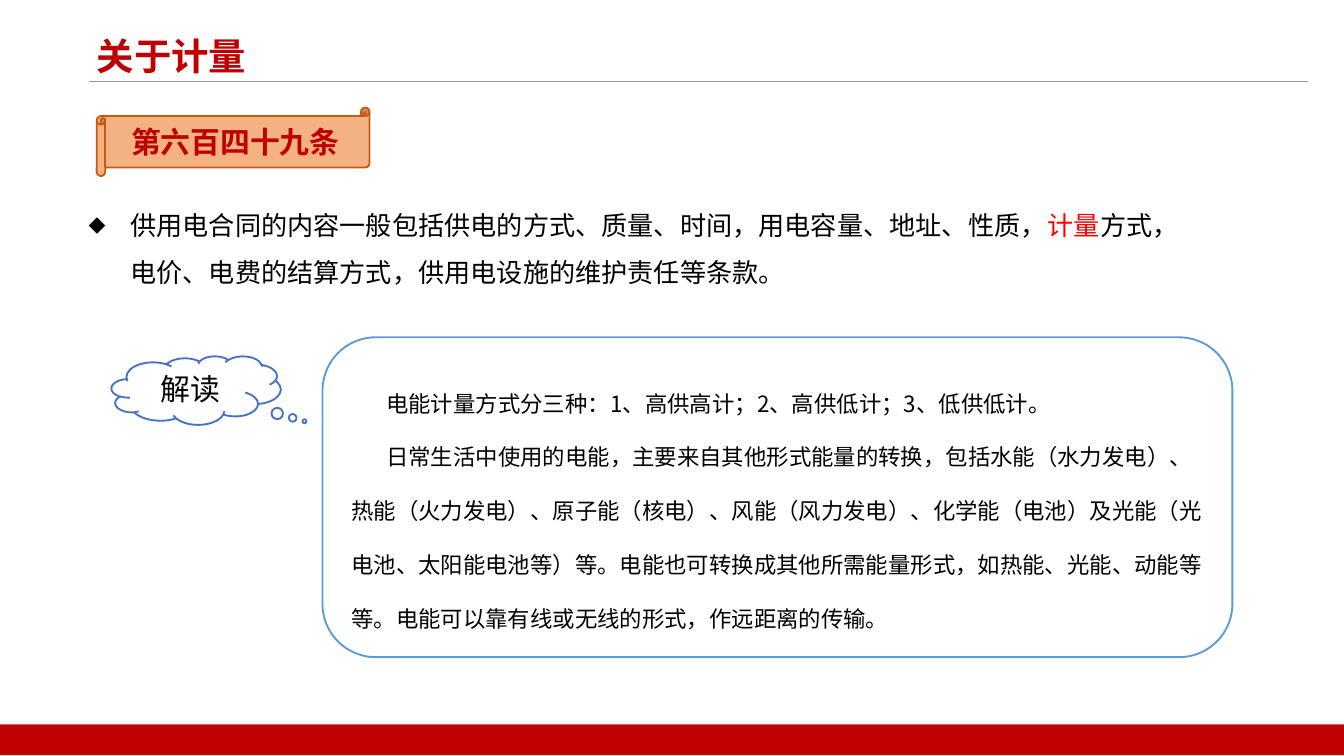
import pptx
import pptx.dml.color
import pptx.enum.shapes
import pptx.enum.text
import pptx.oxml.ns
import pptx.util
from lxml import etree

Inches = pptx.util.Inches
Shape = pptx.enum.shapes.MSO_SHAPE
Align = pptx.enum.text.PP_ALIGN
Anchor = pptx.enum.text.MSO_ANCHOR
FONT = "Noto Sans CJK SC"
RED = "C00000"
BLACK = "000000"
WHITE = "FFFFFF"


def color(value):
    return pptx.dml.color.RGBColor.from_string(value)


def add_xml(parent, tag, **attributes):
    return etree.SubElement(parent, pptx.oxml.ns.qn(tag), **attributes)


def place(shape, left, top, width, height):
    shape.left, shape.top = Inches(left), Inches(top)
    shape.width, shape.height = Inches(width), Inches(height)


def format_paragraph(paragraph, size, text_color=BLACK, bold=False,
                     align=Align.LEFT, spacing=1.0):
    paragraph.alignment = align
    paragraph.line_spacing = spacing
    paragraph.space_before = pptx.util.Pt(0)
    for run in paragraph.runs:
        run.font.size = pptx.util.Pt(size)
        run.font.bold = bold
        run.font.name = FONT
        run.font.color.rgb = color(text_color)
        add_xml(run.font._element, "a:ea", typeface=FONT)


def add_panel(slide, kind, box, fill=None, line=None):
    shape = slide.shapes.add_shape(kind, *[Inches(value) for value in box])
    shape.shadow.inherit = False
    if fill:
        shape.fill.solid()
        shape.fill.fore_color.rgb = color(fill)
    else:
        shape.fill.background()
    if line:
        shape.line.color.rgb = color(line)
        shape.line.width = pptx.util.Pt(1)
    else:
        shape.line.fill.background()
    shape.text_frame.word_wrap = True
    shape.text_frame.vertical_anchor = Anchor.MIDDLE
    return shape


def add_label(shape, text, text_color=BLACK, bold=False):
    shape.text_frame.text = text
    format_paragraph(shape.text_frame.paragraphs[0], 16, text_color, bold,
                     Align.CENTER)


def add_rule(slide, left, right, top):
    rule = slide.shapes.add_connector(
        pptx.enum.shapes.MSO_CONNECTOR.STRAIGHT,
        Inches(left), Inches(top), Inches(right), Inches(top))
    rule.line.color.rgb = color("999999")
    rule.line.width = pptx.util.Pt(0.5)
    add_xml(rule._element.spPr, "a:effectLst")


def set_title(slide, text):
    title = slide.shapes.title
    place(title, 0.62, 0.2, 1.84, 0.51)
    title.text_frame.text = text
    title.text_frame.vertical_anchor = Anchor.TOP
    title.text_frame.auto_size = pptx.enum.text.MSO_AUTO_SIZE.NONE
    format_paragraph(title.text_frame.paragraphs[0], 20, RED, True)


def set_article(slide, parts, highlight):
    body = slide.placeholders[1]
    place(body, 0.56, 1.39, 8.23, 0.75)
    body.text_frame.auto_size = pptx.enum.text.MSO_AUTO_SIZE.NONE
    paragraph = body.text_frame.paragraphs[0]
    for part in parts:
        paragraph.add_run().text = part
    # Small diamond bullet with a hanging indent
    properties = paragraph._p.get_or_add_pPr()
    indent = Inches(0.31)
    properties.set("marL", str(indent))
    properties.set("indent", str(-indent))
    add_xml(properties, "a:buSzPct", val="65000")
    add_xml(properties, "a:buFont", typeface=FONT)
    add_xml(properties, "a:buChar", char="◆")
    format_paragraph(paragraph, 14, spacing=1.5)
    paragraph.runs[highlight].font.color.rgb = color("FF0000")


def add_explanation(slide, box, texts):
    panel = add_panel(slide, Shape.ROUNDED_RECTANGLE, box, line="5B9BD5")
    frame = panel.text_frame
    frame.text = "\n".join(texts)
    for paragraph in frame.paragraphs:
        paragraph._p.get_or_add_pPr().set("indent", str(Inches(0.26)))
        format_paragraph(paragraph, 12, spacing=2.0)


def main():
    presentation = pptx.Presentation()
    # Widescreen page, 16:9
    presentation.slide_width = Inches(10)
    presentation.slide_height = Inches(10) * 9 // 16
    slide = presentation.slides.add_slide(presentation.slide_layouts[1])
    slide.background.fill.solid()
    slide.background.fill.fore_color.rgb = color(WHITE)

    # Heading and footer band
    add_rule(slide, 0.66, 9.73, 0.61)
    set_title(slide, "关于计量")
    add_panel(slide, Shape.RECTANGLE, (0, 5.39, 10, 0.23), RED)

    # Article number and wording
    scroll = add_panel(slide, Shape.HORIZONTAL_SCROLL, (0.72, 0.8, 2.03, 0.51),
                       "F4B183", "C55A11")
    add_label(scroll, "第六百四十九条", RED, True)
    set_article(slide, [
        "供用电合同的内容一般包括供电的方式、质量、时间，用电容量、地址、性质，",
        "计量",
        "方式，电价、电费的结算方式，供用电设施的维护责任等条款。",
    ], highlight=1)

    # Explanation
    cloud = add_panel(slide, Shape.CLOUD_CALLOUT, (0.83, 2.65, 1.26, 0.51),
                      WHITE, "4472C4")
    cloud.adjustments[0] = 0.64
    cloud.adjustments[1] = 0.45
    add_label(cloud, "解读")
    add_explanation(slide, (2.4, 2.51, 6.77, 2.38), [
        "电能计量方式分三种：1、高供高计；2、高供低计；3、低供低计。",
        "日常生活中使用的电能，主要来自其他形式能量的转换，包括水能（水力发电）、"
        "热能（火力发电）、原子能（核电）、风能（风力发电）、化学能（电池）及光能"
        "（光电池、太阳能电池等）等。电能也可转换成其他所需能量形式，如热能、光能、"
        "动能等等。电能可以靠有线或无线的形式，作远距离的传输。",
    ])

    presentation.save("out.pptx")


if __name__ == "__main__":
    main()
